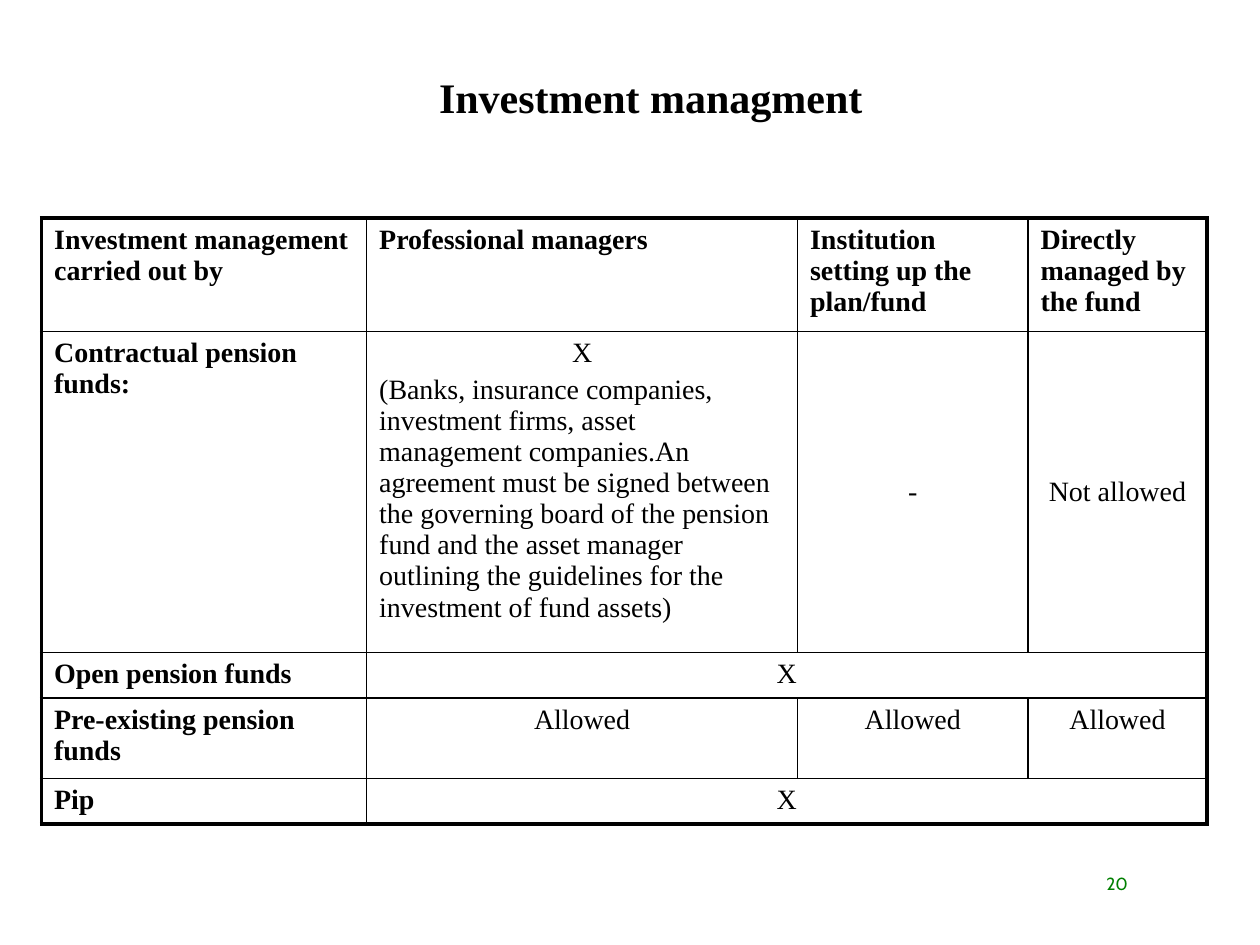
from pptx import Presentation
from pptx.dml.color import RGBColor
from pptx.enum.text import MSO_ANCHOR, PP_ALIGN
from pptx.oxml.ns import qn
from pptx.util import Inches, Pt
from lxml import etree

LEFT, CENTER, RIGHT = PP_ALIGN.LEFT, PP_ALIGN.CENTER, PP_ALIGN.RIGHT
TOP, MIDDLE, BOTTOM = MSO_ANCHOR.TOP, MSO_ANCHOR.MIDDLE, MSO_ANCHOR.BOTTOM
COLORS = {"text": "000000", "paper": "FFFFFF", "number": "008000"}
SERIF, SANS = "Times New Roman", "Cabin"
THIN, THICK = 1, 2.25

COLUMNS = [2.58, 3.42, 1.83, 1.42]
HEIGHTS = [0.9, 2.55, 0.36, 0.64, 0.36]
AGREEMENT = (
    "(Banks, insurance companies, investment firms, asset management "
    "companies.An agreement must be signed between the governing board of "
    "the pension fund and the asset manager outlining the guidelines for "
    "the investment of fund assets)"
)
ROWS = [
    ["Investment management carried out by", "Professional managers",
     "Institution setting up the plan/fund", "Directly managed by the fund"],
    ["Contractual pension funds:", "X\n" + AGREEMENT, "-", "Not allowed"],
    ["Open pension funds", "X"],
    ["Pre-existing pension funds", "Allowed", "Allowed", "Allowed"],
    ["Pip", "X"],
]


class SlideBuilder:
    def __init__(self, slide):
        self.s = slide

    def place(self, sp, left, top, width, height):
        sp.left, sp.top = Inches(left), Inches(top)
        sp.width, sp.height = Inches(width), Inches(height)

    def style(self, p, size, font=SERIF, color="text", bold=False, align=LEFT):
        p.alignment = align
        p.font.name, p.font.size, p.font.bold = font, Pt(size), bold
        p.font.color.rgb = RGBColor.from_string(COLORS[color])

    def title(self, text, *box):
        sp = self.s.shapes.title
        self.place(sp, *box)
        tf = sp.text_frame
        tf.text = text
        tf.vertical_anchor = BOTTOM
        self.style(tf.paragraphs[0], 24, bold=True, align=CENTER)

    def number(self, text, *box):
        sp = self.s.shapes.add_textbox(*map(Inches, box))
        tf = sp.text_frame
        tf.text = text
        tf.word_wrap = True
        tf.vertical_anchor = MIDDLE
        self.style(tf.paragraphs[0], 10, SANS, "number", align=RIGHT)

    def borders(self, cell, widths):
        tcPr = cell._tc.get_or_add_tcPr()
        for side, width in widths.items():
            ln = etree.SubElement(tcPr, qn("a:ln" + side), w=str(Pt(width)))
            fill = etree.SubElement(ln, qn("a:solidFill"))
            etree.SubElement(fill, qn("a:srgbClr"), val=COLORS["text"])

    def cell(self, cell, text, row, col):
        cell.text = text
        cell.vertical_anchor = MIDDLE if row == 1 and col > 1 else TOP
        heading = row == 0 or col == 0
        for p in cell.text_frame.paragraphs:
            left = heading or p.text == AGREEMENT
            self.style(p, 16, bold=heading, align=LEFT if left else CENTER)
            p.space_before = Pt(3.2)

    def table(self, rows, widths, heights, left, top):
        last_row, last_col = len(heights) - 1, len(widths) - 1
        frame = self.s.shapes.add_table(
            len(heights), len(widths), Inches(left), Inches(top),
            Inches(sum(widths)), Inches(sum(heights)))
        table = frame.table
        table.first_row = table.horz_banding = False
        for column, width in zip(table.columns, widths):
            column.width = Inches(width)
        for r, (texts, height) in enumerate(zip(rows, heights)):
            table.rows[r].height = Inches(height)
            end = len(texts) - 1
            if end < last_col:
                table.cell(r, end).merge(table.cell(r, last_col))
            for c in range(len(widths)):
                cell = table.cell(r, c)
                sides = {}
                if c <= end:
                    self.cell(cell, texts[c], r, c)
                    sides["L"] = THIN if c else THICK
                if c < end:
                    sides["R"] = THIN
                elif c in (end, last_col):
                    sides["R"] = THICK
                sides["T"] = THIN if r else THICK
                sides["B"] = THICK if r == last_row else THIN
                self.borders(cell, sides)
                cell.fill.solid()
                cell.fill.fore_color.rgb = RGBColor.from_string(COLORS["paper"])


def main():
    prs = Presentation()
    prs.slide_width, prs.slide_height = Inches(10), Inches(7.5)
    b = SlideBuilder(prs.slides.add_slide(prs.slide_layouts[5]))
    b.title("Investment managment", 0.75, 0.52, 8.83, 0.5)
    b.table(ROWS, COLUMNS, HEIGHTS, 0.33, 1.73)
    b.number("20", 7.65, 6.81, 1.4, 0.4)
    prs.save("out.pptx")


if __name__ == "__main__":
    main()
